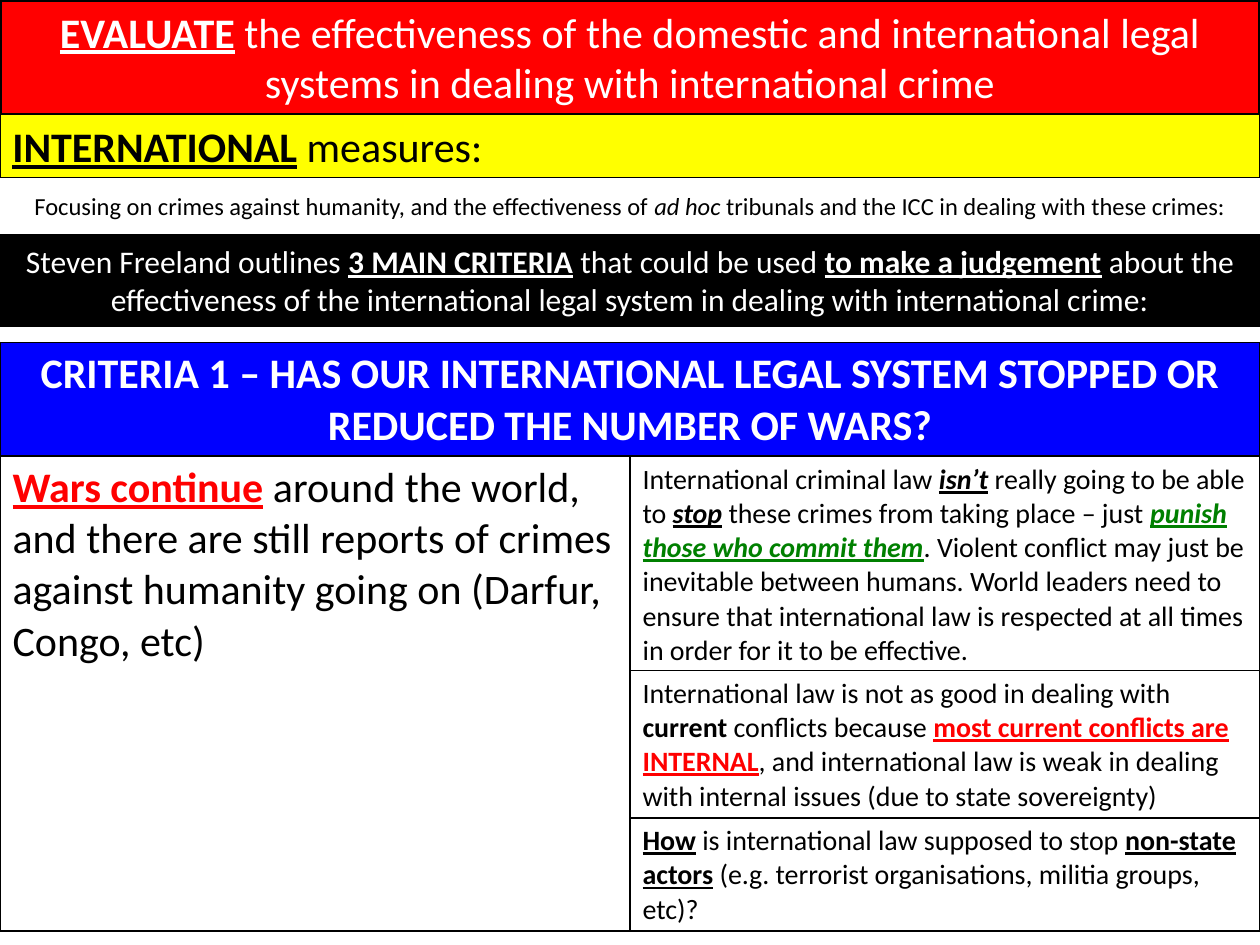
from lxml.etree import SubElement as Sub
from pptx import Presentation as Deck
from pptx.dml.color import RGBColor as Rgb
from pptx.enum.shapes import MSO_SHAPE as Kind
from pptx.enum.text import MSO_ANCHOR as Anchor, MSO_AUTO_SIZE as Fit, PP_ALIGN as Align
from pptx.oxml.ns import qn
from pptx.util import Inches, Pt

COLS, ROWS = 10, 7.5
UNIT = Inches(1)
BLACK, WHITE, RED = "000000", "FFFFFF", "FF0000"
GREEN, BLUE, YELLOW = "008000", "0000FF", "FFFF00"


def tint(code):
    return Rgb.from_string(code)


def span(*cells):
    return [round(n * UNIT) for n in cells]


def write(frame, runs, size=24, color=BLACK, align=Align.LEFT):
    frame.word_wrap = True
    para = frame.paragraphs[0]
    para.alignment = align
    for text, style, *hue in runs:
        run = para.add_run()
        run.text = text
        font = run.font
        font.name, font.size = "Calibri", Pt(size)
        font.bold, font.italic, font.underline = (k in style for k in "biu")
        font.color.rgb = tint(hue[0] if hue else color)


def band(slide, box, runs, fill, edge, **form):
    shape = slide.shapes.add_shape(Kind.RECTANGLE, *span(*box))
    shape.shadow.inherit = False
    shape.fill.solid()
    shape.fill.fore_color.rgb = tint(fill)
    shape.line.color.rgb = tint(BLACK)
    shape.line.width = Pt(edge)
    frame = shape.text_frame
    frame.vertical_anchor = Anchor.TOP
    write(frame, runs, **form)
    frame.auto_size = Fit.SHAPE_TO_FIT_TEXT


def note(slide, box, runs, **form):
    frame = slide.shapes.add_textbox(*span(*box)).text_frame
    write(frame, runs, **form)
    frame.auto_size = Fit.SHAPE_TO_FIT_TEXT


def rule(cell):
    props = cell._tc.get_or_add_tcPr()
    for spot, side in enumerate("LRTB"):
        line = Sub(props, qn(f"a:ln{side}"), w=str(Pt(1)))
        Sub(Sub(line, qn("a:solidFill")), qn("a:srgbClr"), val=BLACK)
        props.insert(spot, line)


def grid(slide, box, highs, head, left, right):
    table = slide.shapes.add_table(len(highs), 2, *span(*box)).table
    table.first_row = table.horz_banding = False
    for row, high in zip(table.rows, highs):
        row.height = span(high)[0]
    for cell in table.iter_cells():
        cell.fill.background()
        rule(cell)
    top, side = table.cell(0, 0), table.cell(1, 0)
    top.merge(table.cell(0, 1))
    side.merge(table.cell(len(highs) - 1, 0))
    top.fill.solid()
    top.fill.fore_color.rgb = tint(BLUE)
    write(top.text_frame, head, color=WHITE, align=Align.CENTER)
    write(side.text_frame, left)
    for row, runs in enumerate(right, 1):
        write(table.cell(row, 1).text_frame, runs, size=16)


def main():
    deck = Deck()
    deck.slide_width, deck.slide_height = span(COLS, ROWS)
    slide = deck.slides.add_slide(deck.slide_layouts[6])

    band(slide, (0, 0, COLS, 0.91), [
        ("EVALUATE", "bu"),
        (" the effectiveness of the domestic and international legal systems"
         " in dealing with international crime", ""),
    ], RED, 2, color=WHITE, align=Align.CENTER)

    highs = 0.9, 1.7, 1.17, 0.9
    grid(slide, (0, 2.72, COLS, sum(highs)), highs, [
        ("CRITERIA 1 – HAS OUR INTERNATIONAL LEGAL SYSTEM STOPPED OR"
         " REDUCED THE NUMBER OF WARS?", "b"),
    ], [
        ("Wars continue", "bu", RED),
        (" ", "b"),
        ("around the world, and there are still reports of crimes against"
         " humanity going on (Darfur, Congo, etc)", ""),
    ], [
        [
            ("International criminal law ", ""),
            ("isn’t", "biu"),
            (" really going to be able to ", ""),
            ("stop", "biu"),
            (" these crimes from taking place – just ", ""),
            ("punish those who commit them", "biu", GREEN),
            (". Violent conflict may just be inevitable between humans."
             " World leaders need to ensure that international law is"
             " respected at all times in order for it to be effective.", ""),
        ],
        [
            ("International law is not as good in dealing with ", ""),
            ("current", "b"),
            (" conflicts because ", ""),
            ("most current conflicts are INTERNAL", "bu", RED),
            (", and international law is weak in dealing with internal"
             " issues (due to state sovereignty)", ""),
        ],
        [
            ("How", "bu"),
            (" is international law supposed to stop ", ""),
            ("non-state actors", "bu"),
            (" (e.g. terrorist organisations, militia groups, etc)?", ""),
        ],
    ])

    note(slide, (0, 1.47, COLS, 0.34), [
        ("Focusing on crimes against humanity, and the effectiveness of ", ""),
        ("ad hoc", "i"),
        (" tribunals and the ICC in dealing with these crimes:", ""),
    ], size=14, align=Align.CENTER)

    band(slide, (0, 1.87, COLS, 0.71), [
        ("Steven Freeland outlines ", ""),
        ("3 MAIN CRITERIA", "bu"),
        (" that could be used ", ""),
        ("to make a judgement", "bu"),
        (" ", "b"),
        ("about the effectiveness of the international legal system in"
         " dealing with international crime:", ""),
    ], BLACK, 2, size=18, color=WHITE, align=Align.CENTER)

    band(slide, (0, 0.91, COLS, 0.5), [
        ("INTERNATIONAL", "bu"),
        (" ", "b"),
        ("measures:", ""),
    ], YELLOW, 0.75)

    deck.save("out.pptx")


if __name__ == "__main__":
    main()
